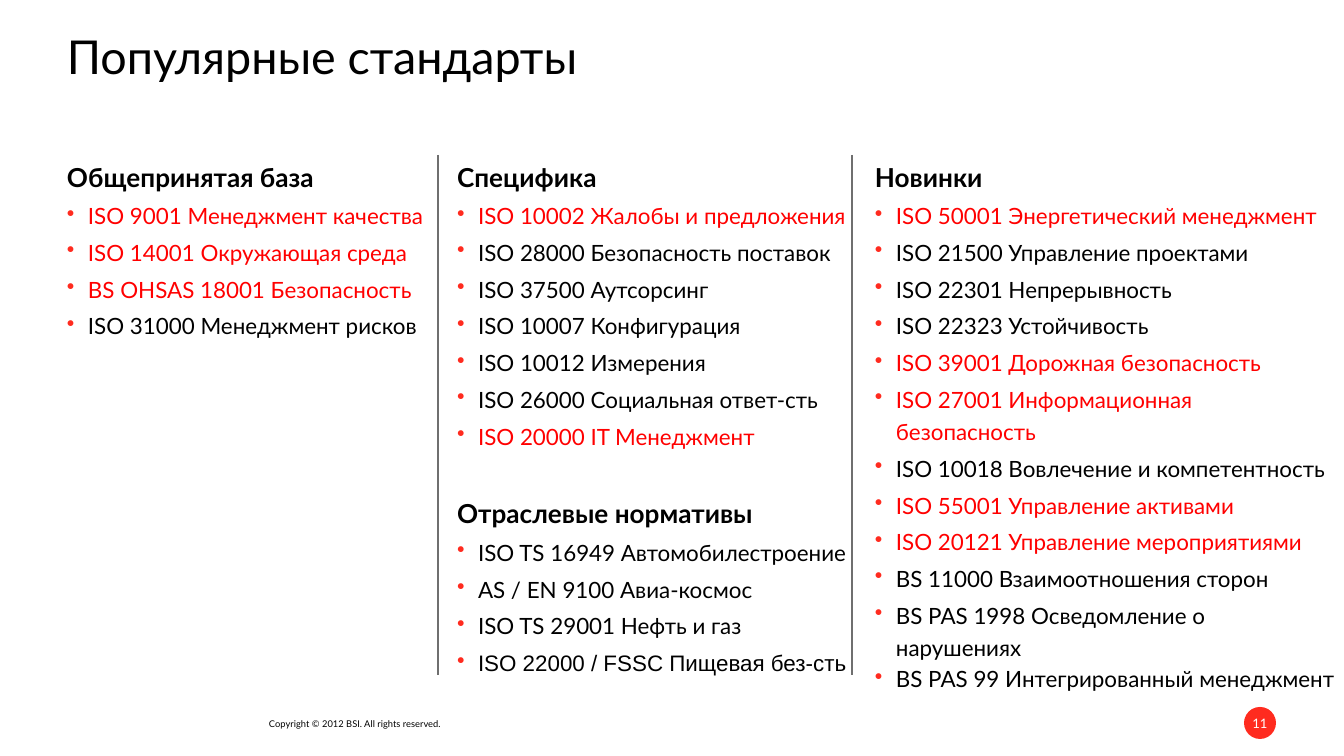
from lxml import etree
from pptx import Presentation
from pptx.dml.color import RGBColor
from pptx.enum.shapes import MSO_CONNECTOR as Connector, MSO_SHAPE as Shape
from pptx.enum.text import MSO_ANCHOR as Anchor, PP_ALIGN as Align
from pptx.oxml.ns import qn
from pptx.util import Emu, Pt

PX_PER_INCH = 134.4
BLACK, RED, ACCENT, GRAY, WHITE = "000000", "FF0000", "FF2B1F", "6F6F6F", "FFFFFF"


def px(length):
    return Emu(round(length * 914400 / PX_PER_INCH))


def color(value):
    return RGBColor.from_string(value)


class SlideBuilder:
    font = "Lato"
    heading_size = 14
    item_size = 12
    indent = 21
    line_spacing = 1.2
    section_gap = 22.5

    def __init__(self, slide):
        self.slide = slide

    def prepare(self, frame):
        frame.word_wrap = True
        frame.margin_left = frame.margin_right = 0
        frame.margin_top = frame.margin_bottom = 0
        return frame

    def frame(self, left, top, width, height):
        box = self.slide.shapes.add_textbox(px(left), px(top), px(width), px(height))
        return self.prepare(box.text_frame)

    def run(self, paragraph, text, size, fill=BLACK, bold=False, font=None):
        run = paragraph.add_run()
        run.text = text
        run.font.name = font or self.font
        run.font.size = Pt(size)
        run.font.bold = bold
        run.font.color.rgb = color(fill)

    def text(self, text, left, top, width, height, size):
        frame = self.frame(left, top, width, height)
        self.run(frame.paragraphs[0], text, size)

    def hang(self, paragraph, bullet):
        properties = paragraph._p.get_or_add_pPr()
        properties.set("marL", str(px(self.indent)))
        properties.set("indent", str(-px(self.indent)))
        if bullet:
            bullet_color = etree.SubElement(properties, qn("a:buClr"))
            etree.SubElement(bullet_color, qn("a:srgbClr"), val=ACCENT)
            etree.SubElement(properties, qn("a:buChar"), char="•")
        else:
            etree.SubElement(properties, qn("a:buNone"))

    def column(self, left, width, sections, top=155, height=521):
        frame = self.frame(left, top, width, height)
        for number, (heading, items) in enumerate(sections):
            paragraph = frame.add_paragraph() if number else frame.paragraphs[0]
            paragraph.space_before = Pt(self.section_gap if number else 0)
            paragraph.line_spacing = self.line_spacing
            self.hang(paragraph, False)
            self.run(paragraph, heading, self.heading_size, bold=True)
            for text, fill, *options in items:
                style = options[0] if options else {}
                paragraph = frame.add_paragraph()
                paragraph.space_before = Pt(self.item_size * 0.2)
                paragraph.line_spacing = style.get("spacing", self.line_spacing)
                self.hang(paragraph, True)
                self.run(paragraph, text, self.item_size, fill, font=style.get("font"))

    def divider(self, x, top=155, bottom=675):
        line = self.slide.shapes.add_connector(
            Connector.STRAIGHT, px(x), px(top), px(x), px(bottom))
        line.line.color.rgb = color(GRAY)
        line.line.width = Pt(0.75)
        etree.SubElement(line._element.spPr, qn("a:effectLst"))

    def badge(self, text, left, top, diameter):
        shape = self.slide.shapes.add_shape(
            Shape.OVAL, px(left), px(top), px(diameter), px(diameter))
        shape.shadow.inherit = False
        shape.fill.solid()
        shape.fill.fore_color.rgb = color(ACCENT)
        shape.line.fill.background()
        frame = self.prepare(shape.text_frame)
        frame.vertical_anchor = Anchor.MIDDLE
        paragraph = frame.paragraphs[0]
        paragraph.alignment = Align.CENTER
        self.run(paragraph, text, 7, WHITE)


COLUMNS = [
    (67, 379, [
        ("Общепринятая база", [
            ("ISO 9001 Менеджмент качества", RED),
            ("ISO 14001 Окружающая среда", RED),
            ("BS OHSAS 18001 Безопасность", RED),
            ("ISO 31000 Менеджмент рисков", BLACK),
        ]),
    ]),
    (457, 413, [
        ("Специфика", [
            ("ISO 10002 Жалобы и предложения", RED),
            ("ISO 28000 Безопасность поставок", BLACK),
            ("ISO 37500 Аутсорсинг", BLACK),
            ("ISO 10007 Конфигурация", BLACK),
            ("ISO 10012 Измерения", BLACK),
            ("ISO 26000 Социальная ответ-сть", BLACK),
            ("ISO 20000 IT Менеджмент", RED),
        ]),
        ("Отраслевые нормативы", [
            ("ISO TS 16949 Автомобилестроение", BLACK),
            ("AS / EN 9100 Авиа-космос", BLACK),
            ("ISO TS 29001 Нефть и газ", BLACK),
            ("ISO 22000 / FSSC Пищевая без-сть", BLACK, {"font": "Arial"}),
        ]),
    ]),
    (875, 461, [
        ("Новинки", [
            ("ISO 50001 Энергетический менеджмент", RED),
            ("ISO 21500 Управление проектами", BLACK),
            ("ISO 22301 Непрерывность", BLACK),
            ("ISO 22323 Устойчивость", BLACK),
            ("ISO 39001 Дорожная безопасность", RED),
            ("ISO 27001 Информационная безопасность", RED),
            ("ISO 10018 Вовлечение и компетентность", BLACK),
            ("ISO 55001 Управление активами", RED),
            ("ISO 20121 Управление мероприятиями", RED),
            ("BS 11000 Взаимоотношения сторон", BLACK),
            ("BS PAS 1998 Осведомление о нарушениях", BLACK),
            ("BS PAS 99 Интегрированный менеджмент", BLACK, {"spacing": 1.0}),
        ]),
    ]),
]


def main():
    presentation = Presentation()
    presentation.slide_width, presentation.slide_height = px(1344), px(756)
    builder = SlideBuilder(presentation.slides.add_slide(presentation.slide_layouts[6]))
    builder.text("Copyright © 2012 BSI. All rights reserved.", 269, 718, 180, 12, 5)
    builder.badge("11", 1244, 707, 32)
    for left, width, sections in COLUMNS:
        builder.column(left, width, sections)
    builder.text("Популярные стандарты", 67, 28, 1210, 52, 25)
    for x in (438, 852):
        builder.divider(x)
    presentation.save("out.pptx")


if __name__ == "__main__":
    main()
